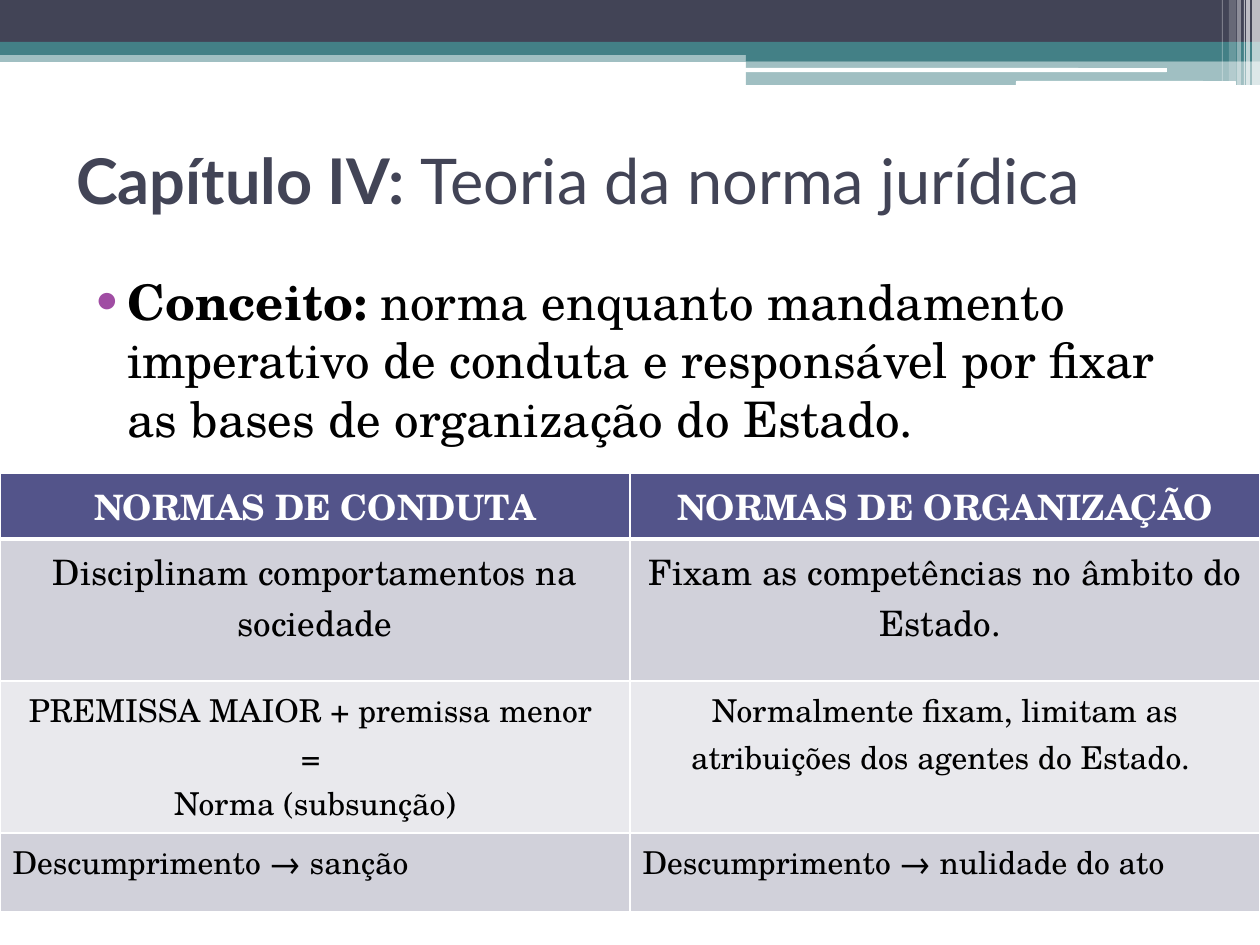
from typing import NamedTuple

from lxml import etree
from pptx import Presentation
from pptx.dml.color import RGBColor
from pptx.enum import shapes, text
from pptx.oxml import ns
from pptx.util import Emu, Pt

PX = 914400 / 126  # EMU per px
SERIF, SANS = "TeX Gyre Schola", "Lato"
NAVY, TEAL, WHITE, BLACK = "424456", "438086", "FFFFFF", "000000"
INDIGO, LILAC, PALE, PURPLE = "53548A", "D1D1DA", "E9E9ED", "A04DA3"
CENTER, LEFT = text.PP_ALIGN.CENTER, text.PP_ALIGN.LEFT


class Band(NamedTuple):
    x: int
    y: int
    w: int
    h: int
    fill: str
    opacity: int = 100
    rounded: bool = False


class Row(NamedTuple):
    height: int
    fill: str
    cells: tuple
    size: int
    align: text.PP_ALIGN = CENTER
    color: str = BLACK
    bold: bool = False
    rule: int = 1  # width of the bottom border in points


BANDS = [
    Band(0, 50, 1260, 12, TEAL, 50),
    Band(0, 0, 1260, 43, NAVY),
    Band(0, 42, 1260, 13, TEAL),
    Band(746, 49, 514, 12, TEAL),
    Band(746, 60, 514, 25, TEAL, 50),
    Band(745, 68, 422, 4, WHITE, rounded=True),
    Band(1016, 81, 220, 5, WHITE, rounded=True),
]
# Vertical stripes in the top right corner: x, width, height, opacity
STRIPES = [
    (1252, 8, 85, 65), (1246, 4, 85, 65), (1244, 1, 85, 60),
    (1237, 4, 85, 40), (1229, 7, 81, 20), (1222, 1, 81, 30),
]
ROWS = [
    Row(66, INDIGO, ("NORMAS DE CONDUTA", "NORMAS DE ORGANIZAÇÃO"), 20,
        color=WHITE, bold=True, rule=3),
    Row(142, LILAC, ("Disciplinam comportamentos na sociedade",
                     "Fixam as competências no âmbito do Estado. "), 20),
    Row(152, PALE, ("PREMISSA MAIOR + premissa menor \n= \nNorma (subsunção)",
                    "Normalmente fixam, limitam as atribuições dos agentes do Estado. "), 18),
    Row(79, LILAC, ("Descumprimento → sanção", "Descumprimento → nulidade do ato"),
        18, align=LEFT),
]


def px(length: float) -> Emu:
    return Emu(round(length * PX))


def rgb(color: str) -> RGBColor:
    return RGBColor.from_string(color)


def draw_band(slide, band: Band) -> None:
    kind = shapes.MSO_SHAPE.ROUNDED_RECTANGLE if band.rounded else shapes.MSO_SHAPE.RECTANGLE
    bar = slide.shapes.add_shape(kind, px(band.x), px(band.y), px(band.w), px(band.h))
    bar.shadow.inherit = False
    bar.line.fill.background()
    bar.fill.solid()
    bar.fill.fore_color.rgb = rgb(band.fill)
    if band.opacity < 100:
        color = bar.fill._xPr.find(".//" + ns.qn("a:srgbClr"))
        etree.SubElement(color, ns.qn("a:alpha"), val=str(band.opacity * 1000))


def write(paragraph, words: str, *, size: int, font: str = SERIF, color: str = BLACK,
          bold: bool = False, align: text.PP_ALIGN = LEFT) -> None:
    paragraph.alignment = align
    run = paragraph.add_run()
    run.text = words
    run.font.name, run.font.size, run.font.bold = font, Pt(size), bold
    run.font.color.rgb = rgb(color)


def add_frame(slide, x: int, y: int, w: int, h: int, anchor: text.MSO_ANCHOR):
    frame = slide.shapes.add_textbox(px(x), px(y), px(w), px(h)).text_frame
    frame.word_wrap = True
    frame.vertical_anchor = anchor
    return frame


def add_bullet(paragraph, mark: str, color: str, margin: int, indent: int) -> None:
    props = paragraph._p.get_or_add_pPr()
    props.set("marL", str(px(margin)))
    props.set("indent", str(px(indent)))
    tint = etree.SubElement(props, ns.qn("a:buClr"))
    etree.SubElement(tint, ns.qn("a:srgbClr"), val=color)
    etree.SubElement(props, ns.qn("a:buFont"), typeface=SERIF)
    etree.SubElement(props, ns.qn("a:buChar"), char=mark)


def set_borders(cell, top: int, bottom: int) -> None:
    props = cell._tc.get_or_add_tcPr()
    sides = (("lnL", 1), ("lnR", 1), ("lnT", top), ("lnB", bottom))
    for place, (side, width) in enumerate(sides):
        line = etree.Element(ns.qn("a:" + side), w=str(Pt(width)))
        fill = etree.SubElement(line, ns.qn("a:solidFill"))
        etree.SubElement(fill, ns.qn("a:srgbClr"), val=WHITE)
        props.insert(place, line)


def draw_table(slide, rows: list[Row], y: int, width: int) -> None:
    columns = len(rows[0].cells)
    total = sum(row.height for row in rows)
    norms = slide.shapes.add_table(len(rows), columns, 0, px(y), px(width), px(total)).table
    top = 1
    for r, row in enumerate(rows):
        norms.rows[r].height = px(row.height)
        for c, words in enumerate(row.cells):
            cell = norms.cell(r, c)
            cell.fill.solid()
            cell.fill.fore_color.rgb = rgb(row.fill)
            set_borders(cell, top, row.rule)
            for i, line in enumerate(words.split("\n")):
                frame = cell.text_frame
                paragraph = frame.add_paragraph() if i else frame.paragraphs[0]
                write(paragraph, line, size=row.size, color=row.color,
                      bold=row.bold, align=row.align)
        top = row.rule


def main() -> None:
    deck = Presentation()
    deck.slide_width, deck.slide_height = px(1260), px(945)
    slide = deck.slides.add_slide(deck.slide_layouts[6])

    # Header decoration
    for band in BANDS:
        draw_band(slide, band)
    for x, w, h, opacity in STRIPES:
        draw_band(slide, Band(x, 0, w, h, WHITE, opacity))

    # Title
    title = add_frame(slide, 64, 106, 1134, 147, text.MSO_ANCHOR.MIDDLE).paragraphs[0]
    write(title, "Capítulo IV: ", size=36, font=SANS, color=NAVY, bold=True)
    write(title, "Teoria da norma jurídica", size=36, font=SANS, color=NAVY)

    # Concept
    concept = add_frame(slide, 64, 265, 1133, 641, text.MSO_ANCHOR.TOP).paragraphs[0]
    concept.space_before = Pt(3)
    write(concept, "Conceito:", size=28, bold=True)
    write(concept, " norma enquanto mandamento imperativo de conduta e responsável "
          "por fixar as bases de organização do Estado.", size=28)
    add_bullet(concept, "•", PURPLE, margin=51, indent=-35)

    # Comparison of the two kinds of norms
    draw_table(slide, ROWS, y=473, width=1260)

    deck.save("out.pptx")


if __name__ == "__main__":
    main()
